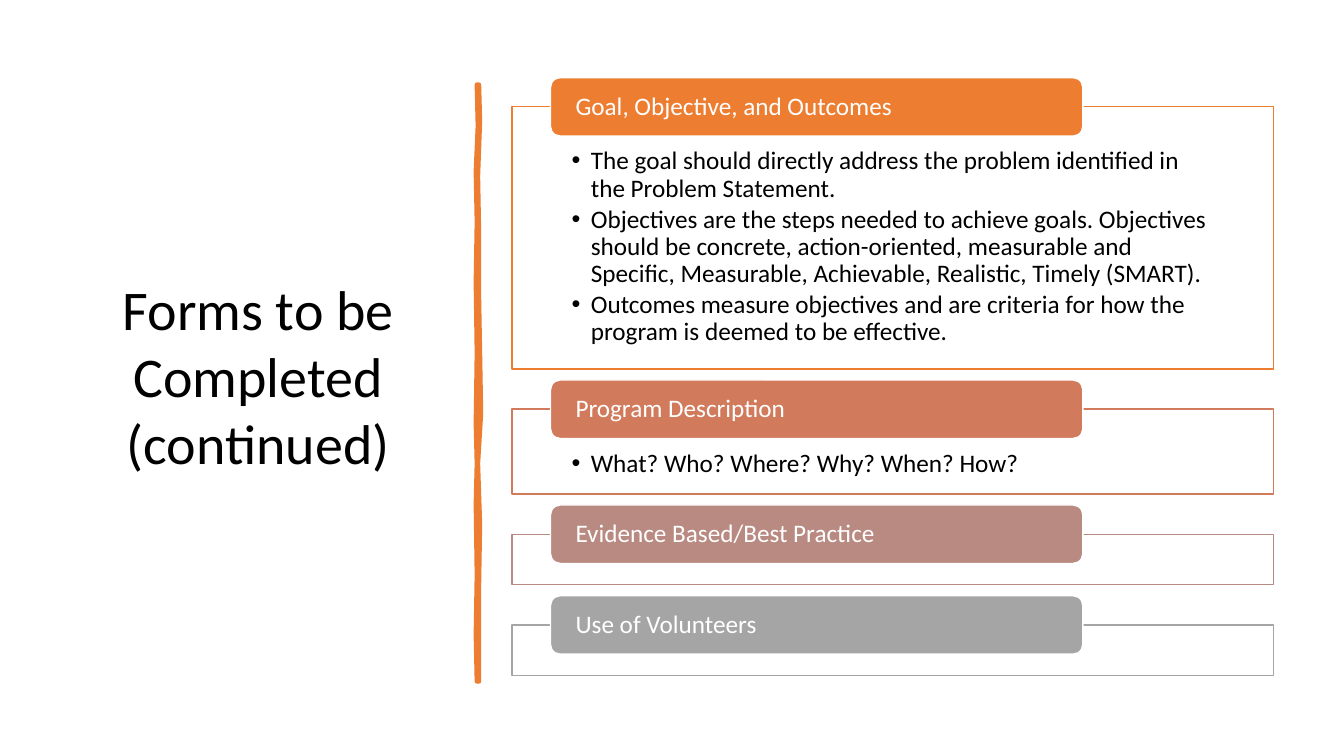
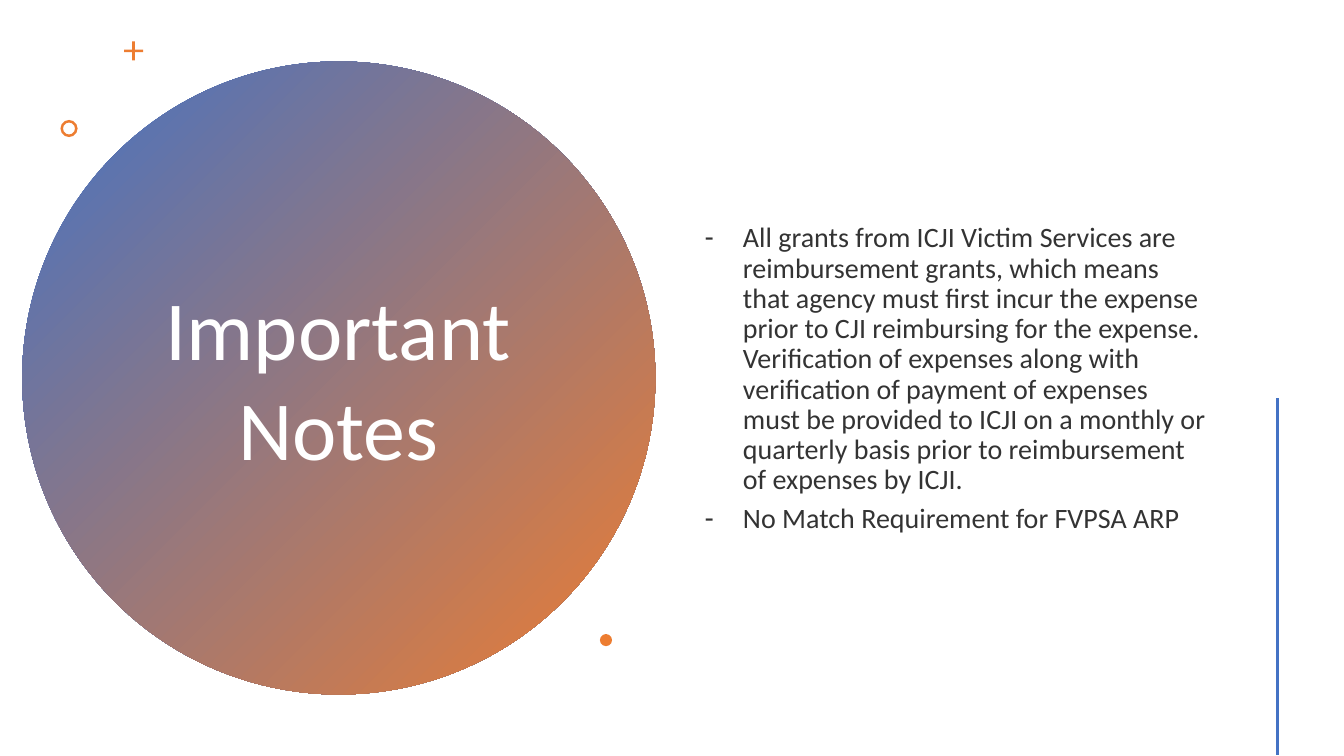
from lxml import etree
from pptx import Presentation
from pptx.dml.color import RGBColor
from pptx.enum.shapes import MSO_CONNECTOR, MSO_SHAPE
from pptx.enum.text import MSO_ANCHOR, PP_ALIGN
from pptx.oxml.ns import qn
from pptx.util import Inches, Pt

RECTANGLE = MSO_SHAPE.RECTANGLE
ROUNDED = MSO_SHAPE.ROUNDED_RECTANGLE
OVAL = MSO_SHAPE.OVAL
CROSS = MSO_SHAPE.CROSS
DONUT = MSO_SHAPE.DONUT
STRAIGHT = MSO_CONNECTOR.STRAIGHT
TOP, MIDDLE = MSO_ANCHOR.TOP, MSO_ANCHOR.MIDDLE
LEFT, CENTER = PP_ALIGN.LEFT, PP_ALIGN.CENTER

FONT = "Calibri"
ORANGE, BLUE = "ED7D31", "4472C4"
WHITE, BLACK, DARK_GREY = "FFFFFF", "000000", "333333"


def paint(shape, fill, line=None, width=1):
    shape.shadow.inherit = False
    shape.fill.solid()
    shape.fill.fore_color.rgb = RGBColor.from_string(fill)
    if line:
        shape.line.color.rgb = RGBColor.from_string(line)
        shape.line.width = Pt(width)
    else:
        shape.line.fill.background()


def write(shape, texts, size, color, anchor=TOP, align=LEFT, spacing=0.9,
          after=0, bullet=None, indent=0, insets=(0.1, 0.05)):
    """Fill a shape with one paragraph per text; insets are (sides, top)."""
    frame = shape.text_frame
    frame.word_wrap = True
    frame.vertical_anchor = anchor
    frame.margin_left = frame.margin_right = Inches(insets[0])
    frame.margin_top = Inches(insets[1])
    frame.margin_bottom = Inches(0.05)
    for index, text in enumerate(texts):
        paragraph = frame.paragraphs[0] if index == 0 else frame.add_paragraph()
        paragraph.alignment = align
        paragraph.line_spacing = spacing
        paragraph.space_after = Pt(after)
        if bullet:
            properties = paragraph._p.get_or_add_pPr()
            properties.set("marL", str(Inches(indent)))
            properties.set("indent", str(-Inches(indent)))
            etree.SubElement(properties, qn("a:buFont")).set("typeface", "Arial")
            etree.SubElement(properties, qn("a:buChar")).set("char", bullet)
        run = paragraph.add_run()
        run.text = text
        run.font.name = FONT
        run.font.size = Pt(size)
        run.font.color.rgb = RGBColor.from_string(color)


presentation = Presentation()
presentation.slide_width = Inches(13.33)
presentation.slide_height = Inches(7.5)
blank = presentation.slide_layouts[6]

# Slide 1: forms to be completed
slide = presentation.slides.add_slide(blank)
shapes = slide.shapes

brush_right = [(4.75, 0.84), (4.76, 1.2), (4.74, 1.75), (4.75, 2.3), (4.75, 2.95),
               (4.76, 3.5), (4.77, 4.1), (4.74, 4.6), (4.76, 5.2), (4.75, 5.8),
               (4.75, 6.76)]
brush_left = [(4.73, 6.76), (4.72, 6.3), (4.73, 5.7), (4.72, 5.0), (4.73, 4.6),
              (4.72, 4.2), (4.73, 3.5), (4.72, 2.8), (4.73, 2.2), (4.72, 1.7),
              (4.74, 1.25), (4.73, 0.84)]
points = [(Inches(x), Inches(y)) for x, y in brush_right + brush_left]
builder = shapes.build_freeform(*points[0])
builder.add_line_segments(points[1:], close=True)
paint(builder.convert_to_shape(), ORANGE, ORANGE, 3.25)

sections = [
    ("Goal, Objective, and Outcomes", ORANGE, 2.6, [
        "The goal should directly address the problem identified in the Problem Statement.",
        "Objectives are the steps needed to achieve goals. Objectives should be concrete, "
        "action-oriented, measurable and Specific, Measurable, Achievable, Realistic, "
        "Timely (SMART).",
        "Outcomes measure objectives and are criteria for how the program is deemed to be "
        "effective.",
    ]),
    ("Program Description", "D17B5C", 0.84, ["What? Who? Where? Why? When? How?"]),
    ("Evidence Based/Best Practice", "B98A82", 0.5, []),
    ("Use of Volunteers", "A5A5A5", 0.5, []),
]
heading_height, gap = 0.58, 0.11
heading_top = 0.77
for heading, color, box_height, bullets in sections:
    box_top = heading_top + heading_height / 2
    box = shapes.add_shape(RECTANGLE, Inches(5.08), Inches(box_top),
                           Inches(7.55), Inches(box_height))
    paint(box, WHITE, color)
    write(box, bullets, 18, BLACK, after=2.7, bullet="•", indent=0.19,
          insets=(0.59, 0.41))
    tab = shapes.add_shape(ROUNDED, Inches(5.46), Inches(heading_top),
                           Inches(5.28), Inches(heading_height))
    paint(tab, color, WHITE)
    write(tab, [heading], 18, WHITE, anchor=MIDDLE, insets=(0.22, 0.05))
    heading_top = box_top + box_height + gap

title = shapes.add_textbox(Inches(0.7), Inches(2.67), Inches(3.72), Inches(2.12))
write(title, ["Forms to be Completed (continued)"], 40, BLACK, align=CENTER, spacing=1)

# Slide 2: important notes
slide = presentation.slides.add_slide(blank)
shapes = slide.shapes

disc = shapes.add_shape(OVAL, Inches(0.22), Inches(0.61), Inches(6.28), Inches(6.28))
paint(disc, BLUE)
disc.fill.gradient()
disc.fill.gradient_angle = 315
for stop, color, position in zip(disc.fill.gradient_stops, (BLUE, ORANGE), (0, 1)):
    stop.color.rgb = RGBColor.from_string(color)
    stop.position = position

ornaments = [(CROSS, 1.23, 0.41, 0.19, 0.43), (DONUT, 0.6, 1.19, 0.17, 0.15),
             (OVAL, 5.95, 6.29, 0.12, None)]
for kind, left, top, size, adjustment in ornaments:
    ornament = shapes.add_shape(kind, Inches(left), Inches(top), Inches(size), Inches(size))
    paint(ornament, ORANGE)
    if adjustment:
        ornament.adjustments[0] = adjustment

notes = shapes.add_textbox(Inches(6.89), Inches(0.57), Inches(5.22), Inches(6.38))
write(notes, [
    "All grants from ICJI Victim Services are reimbursement grants, which means that agency "
    "must first incur the expense prior to CJI reimbursing for the expense. Verification of "
    "expenses along with verification of payment of expenses must be provided to ICJI on a "
    "monthly or quarterly basis prior to reimbursement of expenses by ICJI.",
    "No Match Requirement for FVPSA ARP",
], 20, DARK_GREY, anchor=MIDDLE, after=6, bullet="-", indent=0.38)

rule = shapes.add_connector(STRAIGHT, Inches(12.67), Inches(3.95), Inches(12.67), Inches(7.49))
rule.line.color.rgb = RGBColor.from_string(BLUE)
rule.line.width = Pt(2)
etree.SubElement(rule._element.spPr, qn("a:effectLst"))

title = shapes.add_textbox(Inches(1.14), Inches(2.69), Inches(4.43), Inches(2.12))
write(title, ["Important Notes"], 60, WHITE, align=CENTER, spacing=1)

presentation.save("out.pptx")
